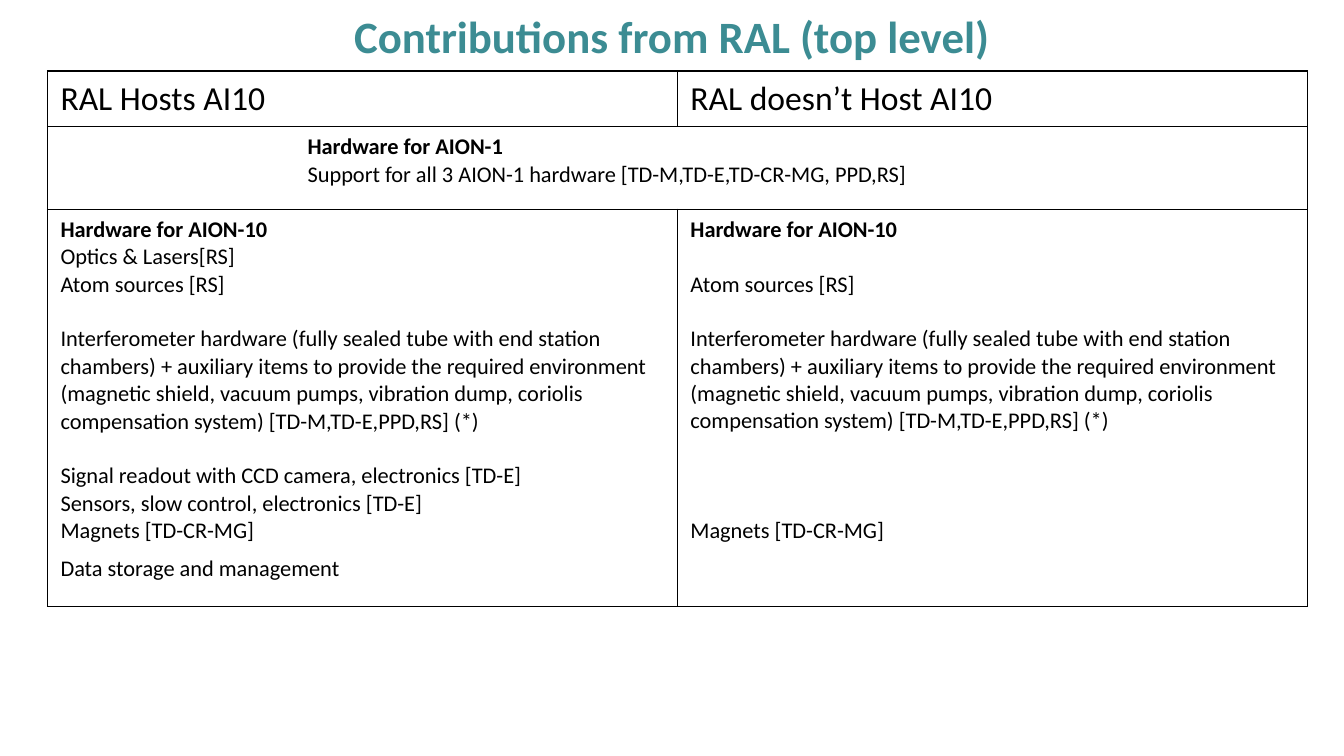
from lxml import etree
from pptx import Presentation
from pptx.dml.color import RGBColor
from pptx.enum.text import MSO_ANCHOR, MSO_AUTO_SIZE, PP_ALIGN
from pptx.oxml.ns import qn
from pptx.util import Inches, Pt

TEAL = RGBColor(0x3C, 0x8C, 0x93)
BLACK = RGBColor(0, 0, 0)
WHITE = RGBColor(0xFF, 0xFF, 0xFF)
CENTER, LEFT = PP_ALIGN.CENTER, PP_ALIGN.LEFT
MIDDLE, TOP = MSO_ANCHOR.MIDDLE, MSO_ANCHOR.TOP
NO_FIT = MSO_AUTO_SIZE.NONE

TITLE = dict(size=Pt(32), bold=True)
HEADER = dict(size=Pt(24), bold=False)
TOPIC = dict(size=Pt(16), bold=True)
BODY = dict(size=Pt(16), bold=False)
INSETS = dict(margin_left=Inches(0.13), margin_right=Inches(0.13),
              margin_top=Inches(0.07), margin_bottom=Inches(0.07))
LINE = 19.5  # height of one body line in points

INTERFEROMETER = (
    "Interferometer hardware (fully sealed tube with end station chambers) + "
    "auxiliary items to provide the required environment (magnetic shield, "
    "vacuum pumps, vibration dump, coriolis compensation system) "
    "[TD-M,TD-E,PPD,RS] (*)")


class Deck:
    """Style and current slide, on a grid of 100 columns by 100 rows."""

    def __init__(self, prs, font="Calibri"):
        self.font = font
        self.col, self.row = prs.slide_width / 100, prs.slide_height / 100
        self.s = prs.slides.add_slide(prs.slide_layouts[5])
        self.s.background.fill.solid()
        self.s.background.fill.fore_color.rgb = WHITE

    def x(self, n):
        return round(n * self.col)

    def y(self, n):
        return round(n * self.row)

    def add_lines(self, tf, lines, color=BLACK, align=LEFT, indent=0):
        """Each line is (text, style, space before in points)."""
        for i, (text, style, gap) in enumerate(lines):
            p = tf.add_paragraph() if i else tf.paragraphs[0]
            p.alignment = align
            p.space_before = Pt(gap)
            if indent:
                pPr = p._p.get_or_add_pPr()
                pPr.set("marL", str(Inches(indent)))
                pPr.set("indent", "0")
            r = p.add_run()
            r.text = text
            r.font.color.rgb = color
            for name, value in dict(style, name=self.font).items():
                setattr(r.font, name, value)

    def title(self, text, width, height):
        sp = self.s.shapes.title
        sp.left, sp.top, sp.width, sp.height = 0, 0, self.x(width), self.y(height)
        tf = sp.text_frame
        for name, value in dict(INSETS, word_wrap=True, auto_size=NO_FIT,
                                vertical_anchor=MIDDLE).items():
            setattr(tf, name, value)
        self.add_lines(tf, [(text, TITLE, 0)], TEAL, CENTER)

    def table(self, left, top, widths, heights):
        frame = self.s.shapes.add_table(
            len(heights), len(widths), self.x(left), self.y(top),
            self.x(sum(widths)), self.y(sum(heights)))
        table = frame.table
        table.first_row = table.horz_banding = False
        for column, width in zip(table.columns, widths):
            column.width = self.x(width)
        for row, height in zip(table.rows, heights):
            row.height = self.y(height)
        for cell in table.iter_cells():
            self.frame_cell(cell)
        return table

    def frame_cell(self, cell):
        for name, value in dict(INSETS, vertical_anchor=TOP).items():
            setattr(cell, name, value)
        tcPr = cell._tc.get_or_add_tcPr()
        for side in ("lnL", "lnR", "lnT", "lnB"):
            ln = etree.SubElement(tcPr, qn("a:" + side), w=str(Pt(1)))
            fill = etree.SubElement(ln, qn("a:solidFill"))
            etree.SubElement(fill, qn("a:srgbClr"), val=str(BLACK))
        cell.fill.solid()
        cell.fill.fore_color.rgb = WHITE


def main():
    prs = Presentation()
    prs.slide_width, prs.slide_height = Inches(13.33), Inches(7.5)
    deck = Deck(prs)

    # Title
    deck.title("Contributions from RAL (top level)", 100, 9.47)

    # Comparison table
    table = deck.table(3.53, 9.4, [46.87] * 2, [7.33, 10.93, 52.53])
    for c, text in enumerate(("RAL Hosts AI10", "RAL doesn’t Host AI10")):
        deck.add_lines(table.cell(0, c).text_frame, [(text, HEADER, 0)])

    # Shared hardware row
    shared = table.cell(1, 0)
    shared.merge(table.cell(1, 1))
    deck.add_lines(shared.text_frame, [
        ("Hardware for AION-1", TOPIC, 0),
        ("Support for all 3 AION-1 hardware [TD-M,TD-E,TD-CR-MG, PPD,RS]", BODY, 0),
    ], indent=2.45)

    # Hardware for each option
    hosting = [
        ("Hardware for AION-10", TOPIC, 0),
        ("Optics & Lasers[RS]", BODY, 0),
        ("Atom sources [RS]", BODY, 0),
        (INTERFEROMETER, BODY, LINE),
        ("Signal readout with CCD camera, electronics [TD-E]", BODY, LINE),
        ("Sensors, slow control, electronics [TD-E]", BODY, 0),
        ("Magnets [TD-CR-MG]", BODY, 0),
        ("Data storage and management", BODY, LINE / 2 - 2),
    ]
    not_hosting = [
        ("Hardware for AION-10", TOPIC, 0),
        ("Atom sources [RS]", BODY, LINE),
        (INTERFEROMETER, BODY, LINE),
        ("Magnets [TD-CR-MG]", BODY, 3 * LINE),
    ]
    for c, lines in enumerate((hosting, not_hosting)):
        deck.add_lines(table.cell(2, c).text_frame, lines)

    prs.save("out.pptx")


if __name__ == "__main__":
    main()
